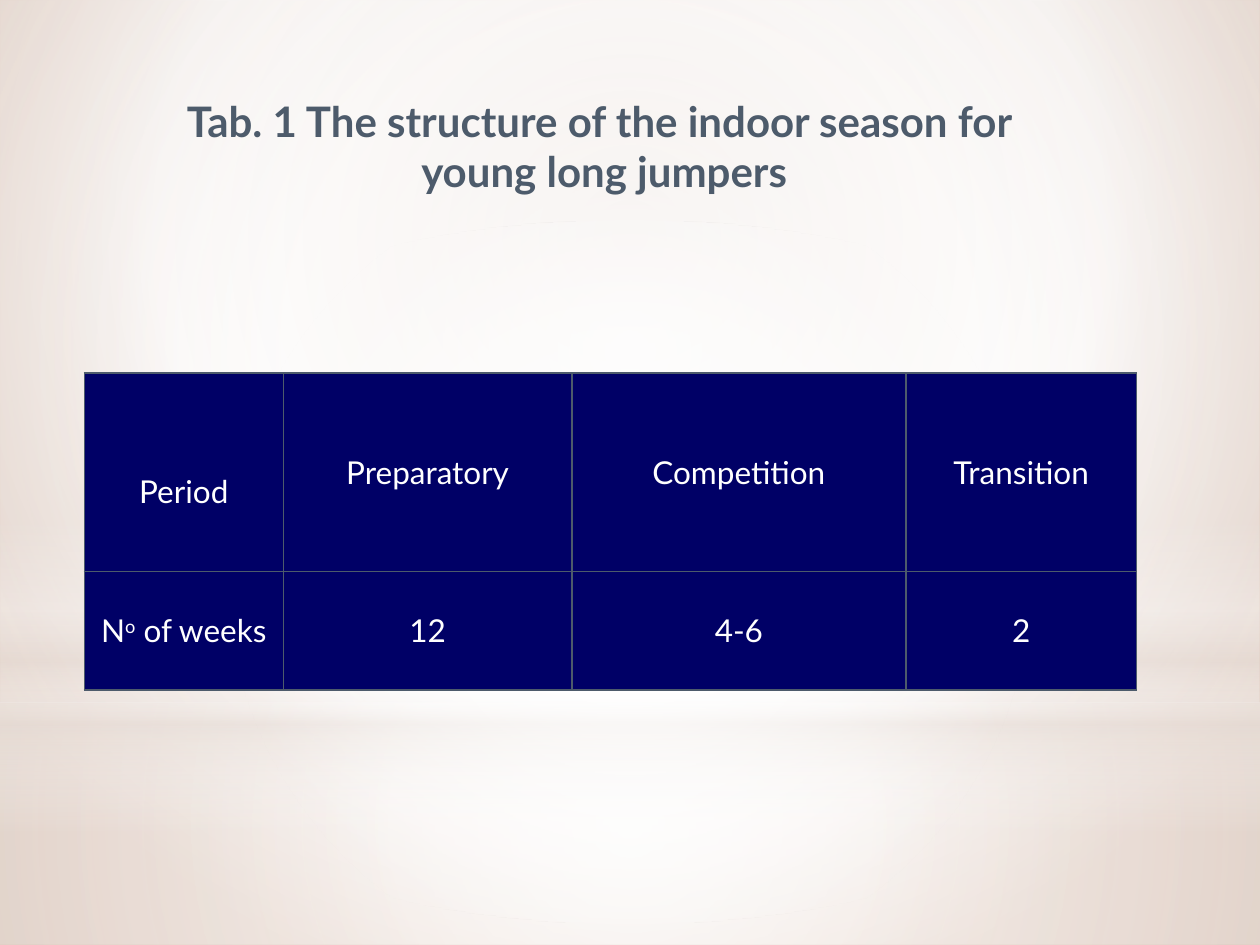
from pptx import Presentation
from pptx.dml.color import RGBColor
from pptx.enum.shapes import MSO_SHAPE
from pptx.enum.text import MSO_ANCHOR, PP_ALIGN
from pptx.oxml import parse_xml
from pptx.oxml.ns import nsdecls
from pptx.util import Cm, Pt

RECTANGLE, OVAL = MSO_SHAPE.RECTANGLE, MSO_SHAPE.OVAL
CENTER, MIDDLE = PP_ALIGN.CENTER, MSO_ANCHOR.MIDDLE
SLATE, NAVY, WHITE, SAND = "4D5B6B", "000066", "FFFFFF", "E8DED8"


def color(hex_code):
    return RGBColor.from_string(hex_code)


def write(para, text, size=18, fill=WHITE, bold=False, raised=False):
    para.alignment = CENTER
    span = para.add_run()
    span.text = text
    span.font.name = "Lato"
    span.font.size = Pt(size)
    span.font.bold = bold
    span.font.color.rgb = color(fill)
    if raised:
        span.font._element.set("baseline", "30000")


deck = Presentation()
deck.slide_width, deck.slide_height = Cm(25.4), Cm(19.05)
page = deck.slides.add_slide(deck.slide_layouts[5])

# Background and its translucent layers: shape, top, height
page.background.fill.gradient()
layers = [
    (RECTANGLE, 14.17, 4.88),
    (RECTANGLE, 0, 14.17),
    (RECTANGLE, 10.46, 6.35),
    (OVAL, 4.45, 14.17),
]
for kind, top, height in layers:
    layer = page.shapes.add_shape(kind, 0, Cm(top), deck.slide_width, Cm(height))
    layer.shadow.inherit = False
    layer.line.fill.background()
    layer.fill.gradient()

# Gradients, background first: stops (position, colour, opacity), focus rectangle
middle = (50, 50, 50, 50)
gradients = [
    ([(0, "E3D4CB", 100), (60, WHITE, 100), (100, "CFAD99", 100)], (20, 10, 20, 60)),
    ([(0, WHITE, 91), (37, WHITE, 76), (100, SAND, 79)], middle),
    ([(0, WHITE, 89), (48, WHITE, 62), (100, SAND, 79)], middle),
    ([(0, WHITE, 0), (29, WHITE, 30), (45, SAND, 40), (55, WHITE, 26),
      (65, SAND, 60), (100, WHITE, 0)], None),
    ([(0, WHITE, 100), (56, WHITE, 0)], middle),
]
for gradient, (stops, focus) in zip(page.element.xpath(".//a:gradFill"), gradients):
    stop_xml = "".join(
        f'<a:gs pos="{position * 1000}"><a:srgbClr val="{tone}">'
        f'<a:alpha val="{opacity * 1000}"/></a:srgbClr></a:gs>'
        for position, tone, opacity in stops)
    if focus:
        sides = " ".join(f'{side}="{share * 1000}"' for side, share in zip("ltrb", focus))
        direction = f'<a:path path="circle"><a:fillToRect {sides}/></a:path>'
    else:
        direction = '<a:lin ang="5400000" scaled="0"/>'
    gradient.getparent().replace(gradient, parse_xml(
        f'<a:gradFill {nsdecls("a")} rotWithShape="1">'
        f'<a:gsLst>{stop_xml}</a:gsLst>{direction}</a:gradFill>'))

# Title, moved in front of the layers
title = page.shapes.title
title.element.getparent().append(title.element)
title.left, title.top, title.width, title.height = Cm(0), Cm(1.78), Cm(24.36), Cm(2.31)
frame = title.text_frame
frame.word_wrap = True
frame.vertical_anchor = MIDDLE
write(frame.paragraphs[0], "Tab. 1 The structure of the indoor season for ",
      size=24, fill=SLATE, bold=True)
write(frame.add_paragraph(), "young long jumpers", size=24, fill=SLATE, bold=True)

# Season table; each cell is a list of (text, raised)
rows = [
    [[("Period", False)], [("Preparatory", False)],
     [("Competition", False)], [("Transition", False)]],
    [[("N", False), ("o", True), (" of weeks", False)], [("12", False)],
     [("4-6", False)], [("2", False)]],
]
table = page.shapes.add_table(2, 4, Cm(1.7), Cm(7.52), Cm(21.21), Cm(6.39)).table
for column, width in zip(table.columns, (4.01, 5.82, 6.73, 4.65)):
    column.width = Cm(width)
for row, height, contents in zip(table.rows, (4, 2.39), rows):
    row.height = Cm(height)
    for cell, spans in zip(row.cells, contents):
        cell.vertical_anchor = MIDDLE
        cell.fill.solid()
        cell.fill.fore_color.rgb = color(NAVY)
        for text, raised in spans:
            write(cell.text_frame.paragraphs[0], text, raised=raised)
        for index, side in enumerate("LRTB"):
            cell._tc.tcPr.insert(index, parse_xml(
                f'<a:ln{side} {nsdecls("a")} w="12700"><a:solidFill>'
                f'<a:srgbClr val="{SLATE}"/></a:solidFill></a:ln{side}>'))

# "Period" sits one half line lower than its neighbours
table.cell(0, 0).margin_top = Cm(0.89)

deck.save("out.pptx")
